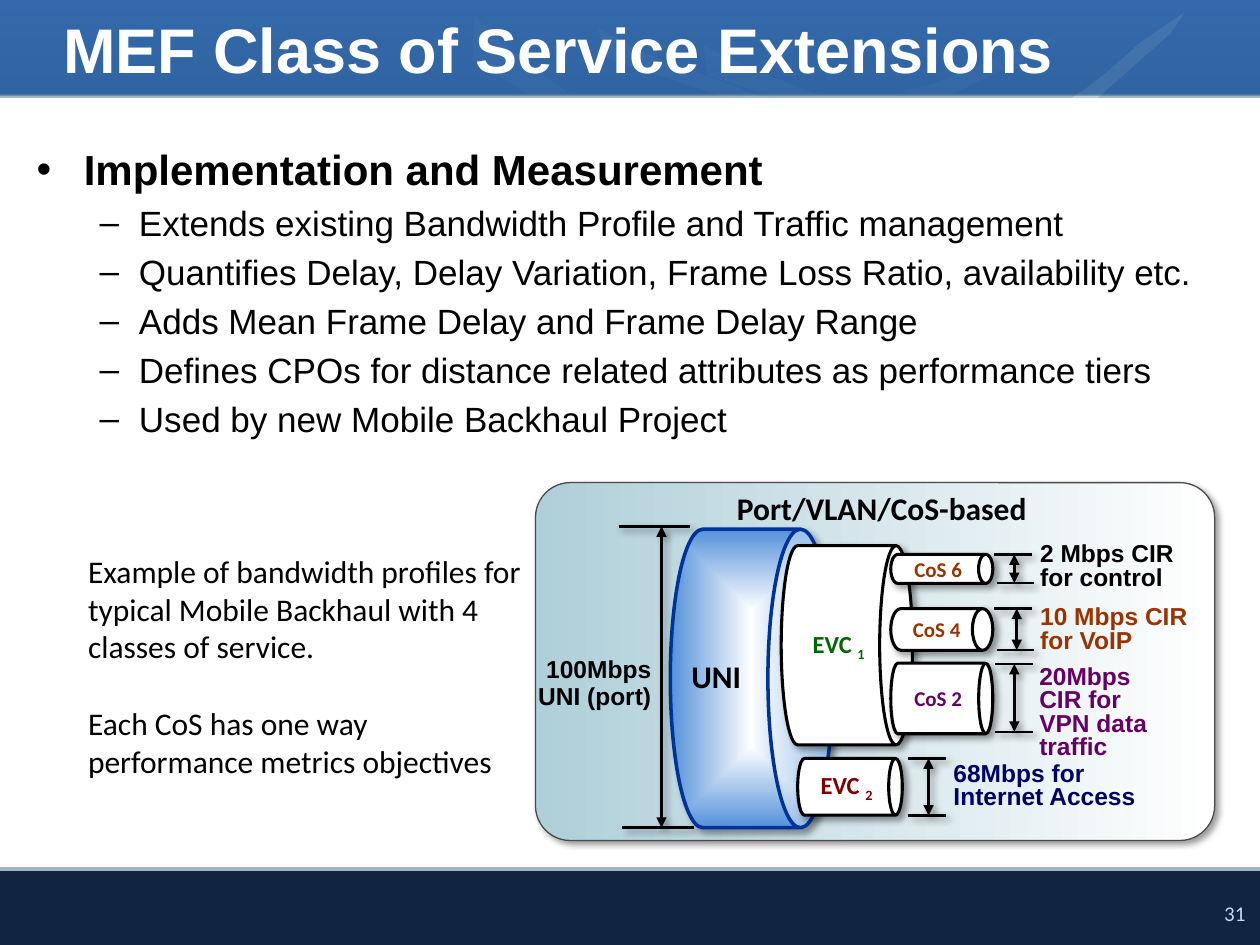
from dataclasses import dataclass

from lxml.etree import SubElement
from pptx import Presentation
from pptx.dml.color import RGBColor
from pptx.enum.shapes import MSO_CONNECTOR, MSO_SHAPE
from pptx.enum.text import MSO_ANCHOR, PP_ALIGN
from pptx.oxml.ns import qn
from pptx.util import Pt


@dataclass(frozen=True)
class Theme:
    """Colours, fonts and type sizes of the slide."""
    heading: str = "Arial"
    label: str = "Calibri"
    black: str = "000000"
    white: str = "FFFFFF"
    sky: str = "548ED5"
    navy: str = "10253F"
    band: str = "255997"
    rule: str = "9EB6C0"
    number: str = "C6D9F1"
    streak: str = "94B8E4"
    pale_streak: str = "C8D6F0"
    panel: str = "AFCFD9"
    panel_line: str = "4A4A4A"
    port: str = "5491DA"
    port_line: str = "003399"
    green: str = "006600"
    rust: str = "993300"
    purple: str = "660066"
    maroon: str = "800000"
    blue: str = "000066"
    title_size: int = 36
    heading_size: int = 24
    item_size: int = 20
    text_size: int = 18
    caption_size: int = 14
    small_size: int = 12


THEME = Theme()


def rgb(color):
    """Turn a hex string into a colour."""
    return RGBColor.from_string(color)


def style(paragraph, size, color=THEME.black, name=THEME.label, bold=False):
    """Set the font of a whole paragraph."""
    font = paragraph.font
    font.size, font.name, font.bold = Pt(size), name, bold
    font.color.rgb = rgb(color)


def set_alpha(shape, percent):
    """Make a solid fill partly transparent."""
    color = shape._element.spPr.find(qn("a:solidFill"))[0]
    SubElement(color, qn("a:alpha"), val=str(percent * 1000))


def add_shadow(shape):
    """Give a shape or connector a soft shadow to the lower right."""
    properties = shape._element.spPr
    effects = properties.find(qn("a:effectLst"))
    if effects is None:
        effects = SubElement(properties, qn("a:effectLst"))
    shadow = SubElement(effects, qn("a:outerShdw"), blurRad=str(Pt(4)), dist=str(Pt(3)),
                        dir="2700000", algn="tl", rotWithShape="0")
    color = SubElement(shadow, qn("a:srgbClr"), val=THEME.black)
    SubElement(color, qn("a:alpha"), val="40000")


def paint(shape, fill, line=None, width=1):
    """Set a solid fill and an outline, without a shadow."""
    shape.shadow.inherit = False
    shape.fill.solid()
    shape.fill.fore_color.rgb = rgb(fill)
    if line:
        shape.line.color.rgb = rgb(line)
        shape.line.width = Pt(width)
    else:
        shape.line.fill.background()


def set_gradient(shape, first, last, end=1.0, angle=0):
    """Fill a shape with a gradient between two colours."""
    shape.fill.gradient()
    shape.fill.gradient_angle = angle
    for stop, color, position in zip(shape.fill.gradient_stops, (first, last), (0, end)):
        stop.color.rgb = rgb(color)
        stop.position = position


def add_box(shapes, kind, left, top, width, height, fill, line=None, weight=1):
    """Add a painted preset shape."""
    shape = shapes.add_shape(kind, Pt(left), Pt(top), Pt(width), Pt(height))
    paint(shape, fill, line, weight)
    return shape


def add_text(shapes, text, left, top, width, height, size, color=THEME.black,
             name=THEME.label, bold=True, wrap=True, spacing=None):
    """Add a text box with one styled paragraph per line of text."""
    box = shapes.add_textbox(Pt(left), Pt(top), Pt(width), Pt(height))
    frame = box.text_frame
    frame.word_wrap = wrap
    frame.text = text
    for paragraph in frame.paragraphs:
        style(paragraph, size, color, name, bold)
        if spacing:
            paragraph.line_spacing = spacing
    return frame


def add_line(shapes, start, end, color=THEME.black, width=1.5, shadow=True, arrows=False):
    """Add a straight line, with an arrowhead at both ends if asked."""
    line = shapes.add_connector(MSO_CONNECTOR.STRAIGHT, *map(Pt, start + end))
    line.line.color.rgb = rgb(color)
    line.line.width = Pt(width)
    if arrows:
        outline = line._element.spPr.find(qn("a:ln"))
        for tag in ("a:headEnd", "a:tailEnd"):
            SubElement(outline, qn(tag), type="triangle")
    if shadow:
        add_shadow(line)
    else:
        SubElement(line._element.spPr, qn("a:effectLst"))


def add_measure(shapes, x, top, bottom, left, width=21.6, shift=0):
    """Add a double arrow between two limit lines."""
    add_line(shapes, (x, top), (x, bottom), arrows=True)
    add_line(shapes, (left, top), (left + width, top))
    add_line(shapes, (left + shift, bottom), (left + width + shift, bottom))


def add_pipe(shapes, left, top, width, height, cap, line=THEME.black, weight=1.75):
    """Add a cylinder lying on its side, placed by its visible frame."""
    pipe = add_box(shapes, MSO_SHAPE.CAN, left + (width - height) / 2,
                   top + (height - width) / 2, height, width, THEME.white, line, weight)
    pipe.rotation = 90
    pipe.adjustments[0] = cap
    add_shadow(pipe)
    return pipe


def label_pipe(pipe, text, color, size, subscript=""):
    """Write an upright label in a lying cylinder."""
    frame = pipe.text_frame
    frame.word_wrap = False
    frame.vertical_anchor = MSO_ANCHOR.MIDDLE
    frame._txBody.bodyPr.set("vert", "vert270")
    paragraph = frame.paragraphs[0]
    paragraph.alignment = PP_ALIGN.CENTER
    paragraph.add_run().text = text
    if subscript:
        run = paragraph.add_run()
        run.text = subscript
        run.font._element.set("baseline", "-25000")
    style(paragraph, size, color, bold=True)


def add_streak(shapes, points, color, percent):
    """Add a faint curved streak of light."""
    builder = shapes.build_freeform(*points[0], scale=Pt(1))
    builder.add_line_segments(points[1:], close=True)
    streak = builder.convert_to_shape()
    paint(streak, color)
    set_alpha(streak, percent)


def add_backdrop(shapes):
    """Draw the header band, white body and footer."""
    base = add_box(shapes, MSO_SHAPE.RECTANGLE, 0, 0, 720, 540, THEME.navy)
    set_gradient(base, THEME.sky, THEME.navy, end=0.5, angle=270)
    for points in (
        [(551, 41), (575, 30), (603, 21), (590, 32), (531, 60), (515, 52), (533, 48)],
        [(462, 52), (508, 68), (558, 89), (523, 82), (404, 43), (402, 26), (431, 40)],
        [(324, 53), (367, 80), (412, 115), (378, 102), (270, 34), (271, 9), (296, 32)],
    ):
        add_streak(shapes, points, THEME.streak, 20)
    add_box(shapes, MSO_SHAPE.RECTANGLE, 0, 54.7, 720, 442, THEME.white)
    for y in (54.7, 496.8):
        add_line(shapes, (0, y), (720, y), THEME.rule, 2.25, shadow=False)
    add_streak(shapes, [(634, 40), (652, 24), (677, 7), (669, 19), (625, 58), (603, 62),
                        (620, 51)], THEME.white, 30)
    band = add_box(shapes, MSO_SHAPE.RECTANGLE, 0, 0, 720, 54.7, THEME.band)
    set_alpha(band, 67)
    add_streak(shapes, [(384, 37), (417, 48), (452, 63), (428, 60), (346, 33), (342, 16),
                        (362, 27)], THEME.pale_streak, 4)
    frame = add_text(shapes, "31", 691.2, 511.2, 28.8, 21.6, THEME.small_size, THEME.number,
                     bold=False, wrap=False)
    frame.paragraphs[0].alignment = PP_ALIGN.CENTER


def place(placeholder, left, top, width, height):
    """Move a placeholder and bring it to the front."""
    placeholder.left, placeholder.top = Pt(left), Pt(top)
    placeholder.width, placeholder.height = Pt(width), Pt(height)
    placeholder.element.getparent().append(placeholder.element)
    return placeholder.text_frame


def fill_title(placeholder, text):
    """Write the slide title."""
    frame = place(placeholder, 28.8, 0, 660, 54.7)
    frame.text = text
    frame.vertical_anchor = MSO_ANCHOR.MIDDLE
    frame.paragraphs[0].alignment = PP_ALIGN.LEFT
    style(frame.paragraphs[0], THEME.title_size, THEME.white, THEME.heading, True)


def fill_body(placeholder, heading, items):
    """Write a bulleted heading and its dashed items."""
    frame = place(placeholder, 13.7, 78.5, 706.3, 210)
    frame.text = "\n".join([heading] + items)
    for index, paragraph in enumerate(frame.paragraphs):
        nested = index > 0
        paragraph.level = int(nested)
        paragraph.space_before = Pt(4 if nested else 0)
        margin, hang, mark = (58.5, 22.5, "–") if nested else (27, 27, "•")
        properties = paragraph._p.get_or_add_pPr()
        properties.set("marL", str(Pt(margin)))
        properties.set("indent", str(-Pt(hang)))
        SubElement(properties, qn("a:buChar"), char=mark)
        style(paragraph, THEME.item_size if nested else THEME.heading_size,
              name=THEME.heading, bold=not nested)


def add_diagram(shapes):
    """Draw the port, its connections and their bandwidths."""
    panel = add_box(shapes, MSO_SHAPE.ROUNDED_RECTANGLE, 306, 275.8, 388.1, 204.5,
                    THEME.panel, THEME.panel_line, 0.75)
    panel.adjustments[0] = 0.097
    set_gradient(panel, THEME.panel, THEME.white)
    add_shadow(panel)
    port = add_pipe(shapes, 383, 302.4, 93, 170.6, 0.4, THEME.port_line, 2)
    set_gradient(port, THEME.white, THEME.port)
    gradient = port._element.spPr.find(qn("a:gradFill"))
    gradient.remove(gradient.find(qn("a:lin")))
    focus = SubElement(gradient, qn("a:path"), path="rect")
    SubElement(focus, qn("a:fillToRect"), l="50000", t="50000", r="50000", b="50000")
    add_text(shapes, "UNI", 388, 372.2, 45.4, 28.8, THEME.text_size, wrap=False)

    for text, subscript, color, size, frame, cap in (
        ("EVC ", "1", THEME.green, THEME.caption_size, (446.4, 311.8, 75, 113.8), 0.25),
        ("CoS 4", "", THEME.rust, THEME.small_size, (509, 347.8, 58.3, 23.8), 0.49),
        ("CoS 2", "", THEME.purple, THEME.small_size, (509, 379, 58.3, 40.3), 0.2),
        ("EVC ", "2", THEME.maroon, THEME.caption_size, (455.8, 433.4, 59.8, 32.4), 0.24),
        ("CoS 6", "", THEME.rust, THEME.small_size, (509, 316.8, 58.3, 16.6), 0.49),
    ):
        label_pipe(add_pipe(shapes, *frame, cap), text, color, size, subscript)

    add_measure(shapes, 378, 300.8, 473, 353.5, 41, 2)
    add_measure(shapes, 530.6, 433.4, 466, 519.1)
    add_measure(shapes, 579.6, 379.4, 418.2, 568.8)
    add_measure(shapes, 581, 347.8, 371.5, 568.1, shift=1.4)
    add_measure(shapes, 579.6, 316.8, 333.2, 568.1, shift=1.4)

    for text, left, top, width, height, color in (
        ("2 Mbps CIR for control", 587.3, 307.4, 103.7, 34.6, THEME.black),
        ("10 Mbps CIR for VoIP", 587.3, 343.4, 103.7, 34.6, THEME.rust),
        ("20Mbps CIR for VPN data traffic", 586.8, 377.3, 93.6, 48.2, THEME.purple),
        ("68Mbps for Internet Access", 537.8, 432.7, 132.5, 34.6, THEME.blue),
    ):
        add_text(shapes, text, left, top, width, height, THEME.caption_size, color,
                 THEME.heading, spacing=0.8)
    frame = add_text(shapes, "100Mbps UNI (port)", 307.4, 375.8, 64.8, 55.4,
                     THEME.caption_size, name=THEME.heading, spacing=0.9)
    frame.margin_left = frame.margin_right = frame.margin_top = frame.margin_bottom = 0
    frame.paragraphs[0].alignment = PP_ALIGN.RIGHT
    add_text(shapes, "Port/VLAN/CoS-based", 414, 275.8, 203.8, 28.8, THEME.text_size, wrap=False)


def main():
    """Build and save the slide."""
    presentation = Presentation()
    presentation.slide_width, presentation.slide_height = Pt(720), Pt(540)
    slide = presentation.slides.add_slide(presentation.slide_layouts[1])
    add_backdrop(slide.shapes)
    fill_title(slide.shapes.title, "MEF Class of Service Extensions")
    fill_body(slide.placeholders[1], "Implementation and Measurement", [
        "Extends existing Bandwidth Profile and Traffic management",
        "Quantifies Delay, Delay Variation, Frame Loss Ratio, availability etc.",
        "Adds Mean Frame Delay and Frame Delay Range",
        "Defines CPOs for distance related attributes as performance tiers",
        "Used by new Mobile Backhaul Project",
    ])
    frame = add_text(
        slide.shapes, "Example of bandwidth profiles for typical Mobile Backhaul with 4 "
        "classes of service.\nEach CoS has one way performance metrics objectives",
        43.2, 311.8, 262.8, 138.2, THEME.text_size, bold=False)
    frame.paragraphs[1].space_before = Pt(22)
    add_diagram(slide.shapes.add_group_shape().shapes)
    presentation.save("out.pptx")


if __name__ == "__main__":
    main()
